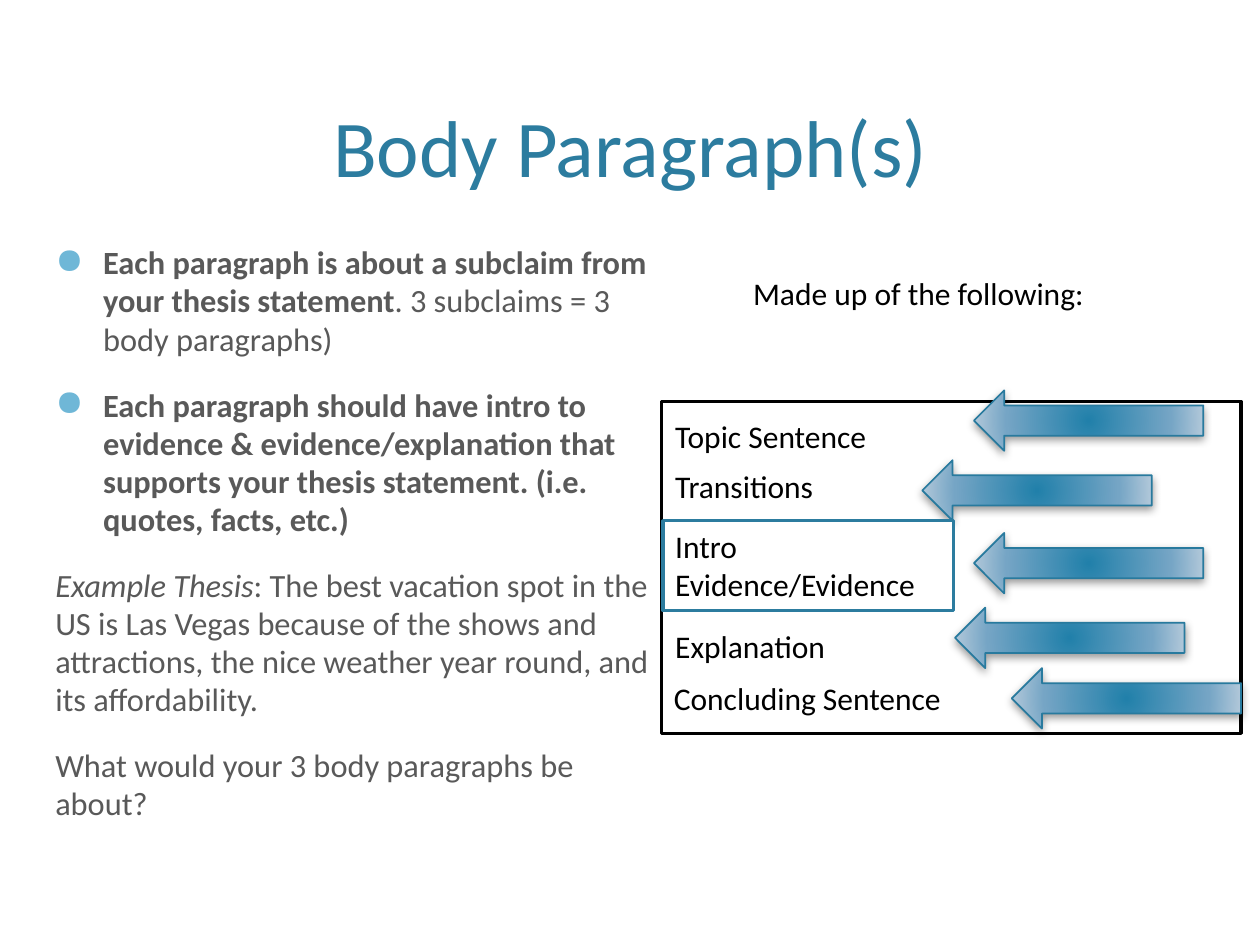
from typing import NamedTuple

from lxml import etree
from pptx import Presentation
from pptx.dml.color import RGBColor
from pptx.enum.shapes import MSO_SHAPE
from pptx.enum.text import MSO_ANCHOR, PP_ALIGN
from pptx.oxml import parse_xml
from pptx.oxml.ns import nsdecls, qn
from pptx.util import Inches, Pt

RECTANGLE, LEFT_ARROW = MSO_SHAPE.RECTANGLE, MSO_SHAPE.LEFT_ARROW
TOP, BOTTOM = MSO_ANCHOR.TOP, MSO_ANCHOR.BOTTOM
LEFT, CENTER = PP_ALIGN.LEFT, PP_ALIGN.CENTER

WIDTH, HEIGHT = 10, 7.5
FONT = "Calibri"
COLORS = {
    "accent": "2C7C9F", "body": "595959", "bullet": "6FB7D7", "black": "000000",
    "white": "FFFFFF", "arrow_line": "287A9E",
}
ARROW_STOPS = ((0, "2180AA"), (69, "75A5C5"), (100, "B8CCDC"))
ARROW_SIZE = (0.182, 0.064)
LABEL_LEFT, LABEL_WIDTH = 0.526, 0.231


class Box(NamedTuple):
    """Place and size as shares of the slide."""
    left: float
    top: float
    width: float
    height: float

    def lengths(self) -> tuple:
        return (Inches(self.left * WIDTH), Inches(self.top * HEIGHT),
                Inches(self.width * WIDTH), Inches(self.height * HEIGHT))


class Run(NamedTuple):
    text: str
    bold: bool = False
    italic: bool = False


class Point(NamedTuple):
    runs: tuple
    bulleted: bool = False


class Label(NamedTuple):
    text: str
    box: Box
    align: int = LEFT


BODY = (
    Point((Run("Each paragraph is about a subclaim from your thesis statement", bold=True),
           Run(". 3 subclaims = 3 body paragraphs)")), bulleted=True),
    Point((Run("Each paragraph should have intro to evidence & evidence/explanation that "
               "supports your thesis statement. (i.e. quotes, facts, etc.)", bold=True),),
          bulleted=True),
    Point((Run("Example Thesis", italic=True),
           Run(": The best vacation spot in the US is Las Vegas because of the shows and "
               "attractions, the nice weather year round, and its affordability."))),
    Point((Run("What would your 3 body paragraphs be about?"),)),
)
LABELS = (
    Label("Made up of the following:", Box(0.584, 0.283, 0.29, 0.095), CENTER),
    Label("Topic Sentence", Box(LABEL_LEFT, 0.435, LABEL_WIDTH, 0.053)),
    Label("Transitions", Box(LABEL_LEFT, 0.488, LABEL_WIDTH, 0.053)),
    Label("Explanation", Box(LABEL_LEFT, 0.657, LABEL_WIDTH, 0.053)),
    Label("Concluding Sentence", Box(0.525, 0.712, 0.297, 0.055)),
)
INTRO = Label("Intro Evidence/Evidence", Box(LABEL_LEFT, 0.551, LABEL_WIDTH, 0.095))
ARROW_PLACES = ((0.773, 0.413), (0.732, 0.487), (0.773, 0.564), (0.758, 0.643), (0.803, 0.707))


def color(name: str) -> RGBColor:
    return RGBColor.from_string(COLORS[name])


def style(paragraph, size: float, color_name: str, align: int = LEFT) -> None:
    paragraph.alignment = align
    paragraph.font.name = FONT
    paragraph.font.size = Pt(size)
    paragraph.font.color.rgb = color(color_name)


def write_label(shape, label: Label, size: float = 18, color_name: str = "black",
                anchor: int = TOP) -> None:
    frame = shape.text_frame
    frame.word_wrap = True
    frame.vertical_anchor = anchor
    paragraph = frame.paragraphs[0]
    paragraph.text = label.text
    style(paragraph, size, color_name, label.align)


def add_label(slide, label: Label, **options) -> None:
    write_label(slide.shapes.add_textbox(*label.box.lengths()), label, **options)


def add_frame(slide, box: Box, line_name: str):
    shape = slide.shapes.add_shape(RECTANGLE, *box.lengths())
    shape.shadow.inherit = False
    shape.fill.background()
    shape.line.color.rgb = color(line_name)
    shape.line.width = Pt(2)
    return shape


def add_bullet(paragraph) -> None:
    properties = paragraph._p.get_or_add_pPr()
    properties.set("marL", str(Inches(0.38)))
    properties.set("indent", str(-Inches(0.38)))
    bullet_color = etree.SubElement(properties, qn("a:buClr"))
    etree.SubElement(bullet_color, qn("a:srgbClr"), val=COLORS["bullet"])
    etree.SubElement(properties, qn("a:buSzPct"), val="110000")
    etree.SubElement(properties, qn("a:buChar"), char="●")


def add_body(slide, box: Box) -> None:
    frame = slide.shapes.add_textbox(*box.lengths()).text_frame
    frame.word_wrap = True
    for index, point in enumerate(BODY):
        paragraph = frame.add_paragraph() if index else frame.paragraphs[0]
        style(paragraph, 18.5, "body")
        paragraph.space_before = Pt(16 if index else 0)
        paragraph.line_spacing = 0.98
        if point.bulleted:
            add_bullet(paragraph)
        for part in point.runs:
            run = paragraph.add_run()
            run.text = part.text
            run.font.bold = part.bold
            run.font.italic = part.italic


def add_arrow(slide, left: float, top: float) -> None:
    shape = slide.shapes.add_shape(LEFT_ARROW, *Box(left, top, *ARROW_SIZE).lengths())
    shape.line.color.rgb = color("arrow_line")
    shape.line.width = Pt(1)
    # Radial gradient and soft shadow below
    stops = "".join(f'<a:gs pos="{place * 1000}"><a:srgbClr val="{value}"/></a:gs>'
                    for place, value in ARROW_STOPS)
    gradient = parse_xml(
        f'<a:gradFill {nsdecls("a")} rotWithShape="1"><a:gsLst>{stops}</a:gsLst>'
        '<a:path path="circle"><a:fillToRect l="100000" t="100000" r="100000" b="100000"/>'
        '</a:path></a:gradFill>')
    shadow = parse_xml(
        f'<a:effectLst {nsdecls("a")}><a:outerShdw blurRad="{Pt(5)}" dist="{Pt(2)}" '
        f'dir="5400000" rotWithShape="0"><a:srgbClr val="{COLORS["black"]}">'
        '<a:alpha val="40000"/></a:srgbClr></a:outerShdw></a:effectLst>')
    properties = shape._element.spPr
    properties.find(qn("a:prstGeom")).addnext(gradient)
    properties.find(qn("a:ln")).addnext(shadow)


def main() -> None:
    presentation = Presentation()
    presentation.slide_width, presentation.slide_height = Inches(WIDTH), Inches(HEIGHT)
    slide = presentation.slides.add_slide(presentation.slide_layouts[6])

    # Title and left column
    title = Label("Body Paragraph(s)", Box(0.06, 0.016, 0.88, 0.195), CENTER)
    add_label(slide, title, size=46, color_name="accent", anchor=BOTTOM)
    add_body(slide, Box(0.034, 0.252, 0.491, 0.72))

    # Framed list of paragraph parts, with arrows
    add_frame(slide, Box(0.525, 0.425, 0.46, 0.351), "black")
    for left, top in ARROW_PLACES:
        add_arrow(slide, left, top)
    for label in LABELS:
        add_label(slide, label)

    # Highlighted part
    intro = add_frame(slide, INTRO.box, "accent")
    intro.fill.solid()
    intro.fill.fore_color.rgb = color("white")
    write_label(intro, INTRO)

    presentation.save("out.pptx")


if __name__ == "__main__":
    main()
